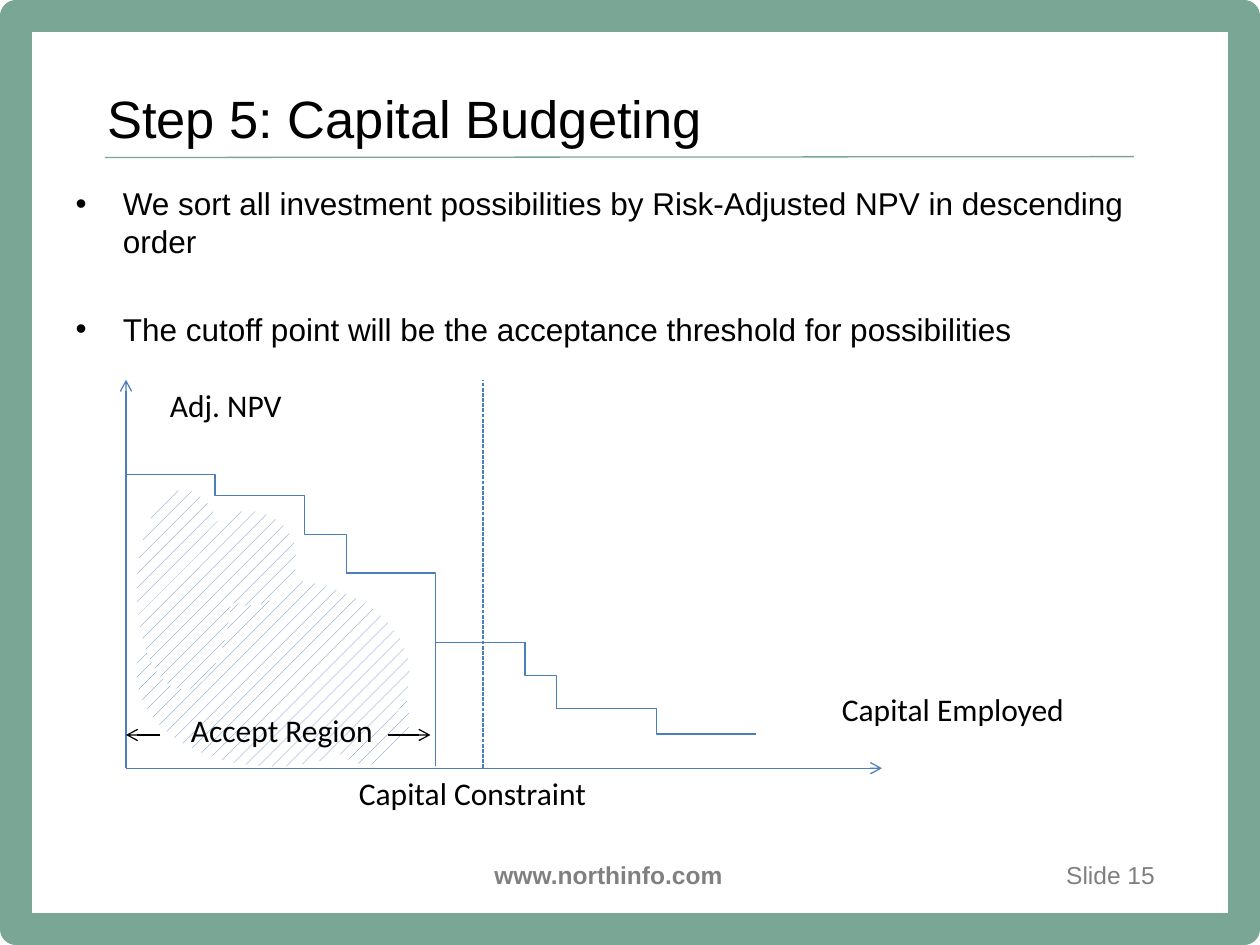
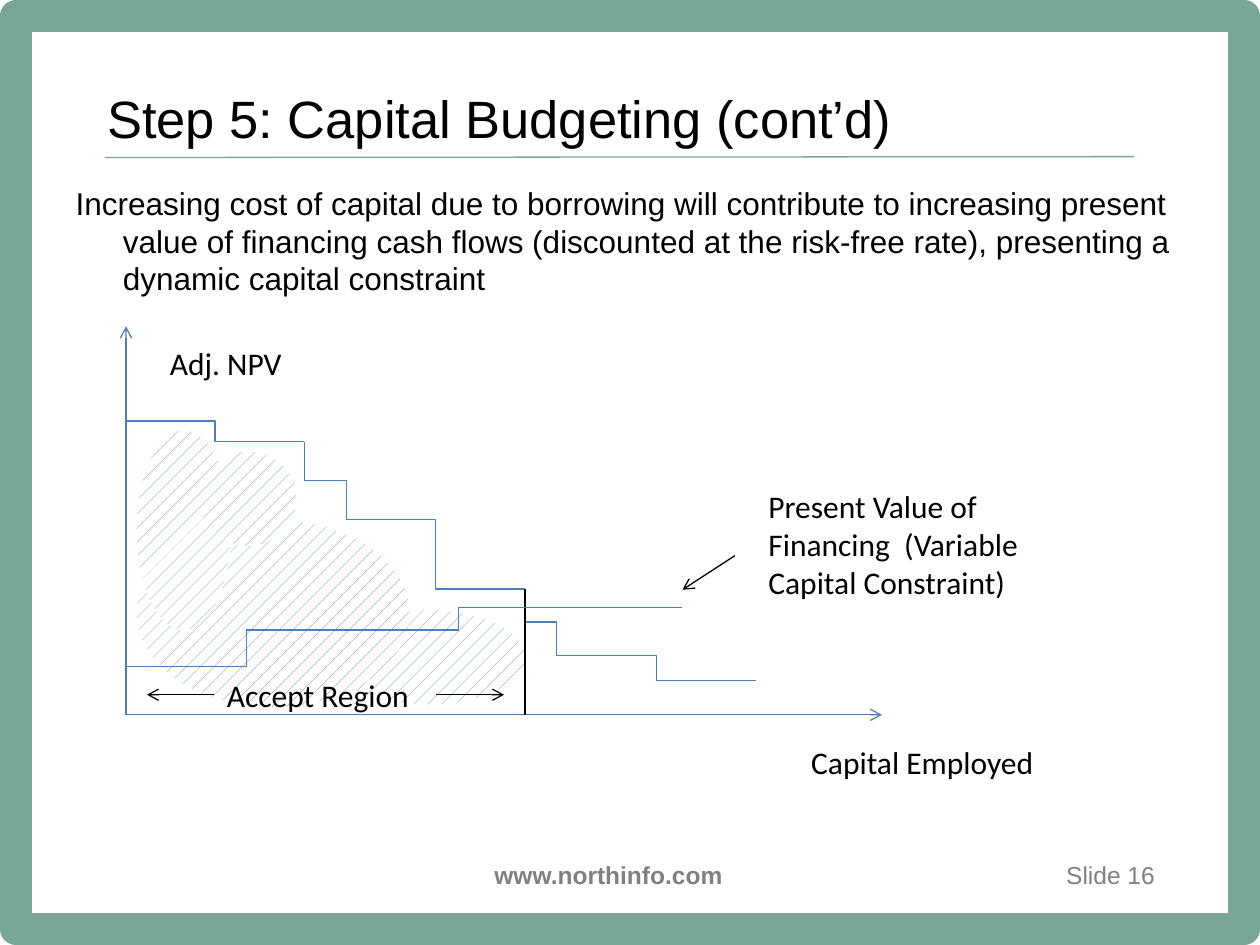
import pptx
import pptx.dml.color
import pptx.enum.dml
import pptx.enum.shapes
import pptx.enum.text
import pptx.oxml
import pptx.util

Pt = pptx.util.Pt
hex_color = pptx.dml.color.RGBColor.from_string
CONNECTOR = pptx.enum.shapes.MSO_CONNECTOR
SHAPE = pptx.enum.shapes.MSO_SHAPE
ALIGN = pptx.enum.text.PP_ALIGN
MIDDLE = pptx.enum.text.MSO_ANCHOR.MIDDLE
NAMESPACE = 'xmlns:a="http://schemas.openxmlformats.org/drawingml/2006/main"'

GREEN, BLUE, HATCH_BLUE = "7AA696", "4B7EBC", "4F81BD"
BLACK, GRAY, WHITE = "000000", "808080", "FFFFFF"
TITLE_FONT = {"name": "Arial", "size": Pt(30), "bold": False}
BODY_FONT = {"name": "Arial", "size": Pt(18)}
LABEL_FONT = {"name": "Calibri", "size": Pt(18)}
FOOTER_FONT = {"name": "Arial", "size": Pt(14)}

AXIS_LEFT, AXIS_RIGHT, AXIS_HEIGHT = 72, 504, 222
# Corner points of the NPV staircase: x, height above the capital axis
NPV_STEPS = [(72, 168), (174, 156), (198, 111.5), (300, 72), (318, 34), (432, 19.5)]
# Hatched ellipses: left, top, width, height, rotation
HATCHES = [(78, 331, 156, 107, 0), (48, 310, 114, 54, 90), (114, 292, 55.5, 54, 0)]

SLIDES = [
    {
        "title": "Step 5: Capital Budgeting",
        "bullets": True,
        "body": [
            "We sort all investment possibilities by Risk-Adjusted NPV in descending order",
            "The cutoff point will be the acceptance threshold for possibilities",
        ],
        "footer": "Slide 15",
        "axis_y": 439,
        "hatch_shift": 0,
        "extra_hatch": (186, 383, 48, 54, 0),
        "labels": [
            ("Adj. NPV", 90, 217, 84),
            ("Capital Employed", 474, 391, 144),
            ("Capital Constraint", 198, 439, 192),
            ("Accept Region", 102, 403, 120),
        ],
        "lines": [
            (249, 366, 249, 438, BLUE, {}),
            (276, 439, 276, 217, BLUE, {"dashed": True}),
            (91.5, 420, 72, 420, BLACK, {"arrow": True}),
            (222, 420, 246, 420, BLACK, {"arrow": True}),
        ],
    },
    {
        "title": "Step 5: Capital Budgeting (cont’d)",
        "bullets": False,
        "body": [
            "Increasing cost of capital due to borrowing will contribute to increasing "
            "present value of financing cash flows (discounted at the risk-free rate), "
            "presenting a dynamic capital constraint",
        ],
        "footer": "Slide 16",
        "axis_y": 408.5,
        "hatch_shift": -34,
        "extra_hatch": (186, 348.5, 114, 54, 0),
        "labels": [
            ("Adj. NPV", 90, 193, 84),
            ("Capital Employed", 456.5, 421, 144),
            ("Present Value of Financing  (Variable Capital Constraint)", 432, 275, 192),
            ("Accept Region", 122.5, 382.5, 120),
        ],
        "lines": [
            (300, 336.5, 300, 408.5, BLACK, {}),
            (72, 381, 210, 360, BLUE, {"bend": 0.5}),
            (210, 360, 390, 347, BLUE, {"bend": 0.29}),
            (420, 317.5, 390, 337, BLACK, {"arrow": True}),
            (122.5, 397, 84, 397, BLACK, {"arrow": True}),
            (249, 397, 288, 397, BLACK, {"arrow": True}),
        ],
    },
]


def add_line(slide, x1, y1, x2, y2, color, arrow=False, dashed=False, bend=None, upright=False):
    """Draw a line; bend makes it an elbow, upright makes the elbow start vertically."""
    if upright:
        center_x, center_y = (x1 + x2) / 2, (y1 + y2) / 2
        half_width, half_height = (y2 - y1) / 2, (x2 - x1) / 2
        x1, x2 = center_x - half_width, center_x + half_width
        y1, y2 = center_y - half_height, center_y + half_height
    kind = CONNECTOR.STRAIGHT if bend is None else CONNECTOR.ELBOW
    connector = slide.shapes.add_connector(kind, Pt(x1), Pt(y1), Pt(x2), Pt(y2))
    properties = connector._element.spPr
    if upright:
        properties.xfrm.set("rot", "16200000")
        properties.xfrm.set("flipH", "1")
    if bend is not None:
        guides = properties.xpath("a:prstGeom/a:avLst")[0]
        guides.append(pptx.oxml.parse_xml(
            f'<a:gd {NAMESPACE} name="adj1" fmla="val {round(bend * 100000)}"/>'))
    connector.line.color.rgb = hex_color(color)
    connector.line.width = Pt(0.75)
    if dashed:
        connector.line.dash_style = pptx.enum.dml.MSO_LINE.SQUARE_DOT
    if arrow:
        connector.line._get_or_add_ln().append(
            pptx.oxml.parse_xml(f'<a:tailEnd {NAMESPACE} type="arrow"/>'))
    properties.append(pptx.oxml.parse_xml(f"<a:effectLst {NAMESPACE}/>"))


def add_label(slide, text, left, top, width, height=29, font=LABEL_FONT, color=BLACK,
              align=ALIGN.LEFT):
    box = slide.shapes.add_textbox(Pt(left), Pt(top), Pt(width), Pt(height))
    box.text_frame.word_wrap = True
    paragraph = box.text_frame.paragraphs[0]
    paragraph.text = text
    paragraph.alignment = align
    for name, value in font.items():
        setattr(paragraph.font, name, value)
    paragraph.font.color.rgb = hex_color(color)
    return box


presentation = pptx.Presentation()
presentation.slide_width, presentation.slide_height = Pt(720), Pt(540)

for content in SLIDES:
    slide = presentation.slides.add_slide(presentation.slide_layouts[1])
    title, body = slide.placeholders

    # Frame, title rule and footer
    frame = slide.shapes.add_shape(SHAPE.RECTANGLE, Pt(9), Pt(9), Pt(702), Pt(522))
    frame.shadow.inherit = False
    frame.fill.background()
    frame.line.color.rgb = hex_color(GREEN)
    frame.line.width = Pt(18)
    add_line(slide, 60, 90, 648, 89.5, GREEN)
    add_label(slide, "www.northinfo.com", 255.5, 488, 184.5, 24,
              FOOTER_FONT | {"bold": True}, GRAY, ALIGN.CENTER)
    number = add_label(slide, content["footer"], 588, 488, 72, 24,
                       FOOTER_FONT, GRAY, ALIGN.RIGHT)
    number.text_frame.vertical_anchor = MIDDLE
    for side in ("left", "top", "right", "bottom"):
        setattr(number.text_frame, f"margin_{side}", 0)

    # Title and body text
    for placeholder, lines, top, height, font in (
        (title, [content["title"]], 42, 50, TITLE_FONT),
        (body, content["body"], 102, 356.5, BODY_FONT),
    ):
        placeholder.left, placeholder.top = Pt(54 if placeholder is title else 36), Pt(top)
        placeholder.width, placeholder.height = Pt(648), Pt(height)
        frame_text = placeholder.text_frame
        frame_text.auto_size = pptx.enum.text.MSO_AUTO_SIZE.NONE
        frame_text.text = "\n".join(lines)
        for index, paragraph in enumerate(frame_text.paragraphs):
            if placeholder is body:
                if not content["bullets"]:
                    paragraph._p.get_or_add_pPr().append(
                        pptx.oxml.parse_xml(f"<a:buNone {NAMESPACE}/>"))
                paragraph.line_spacing = Pt(21.4)
            paragraph.space_before = Pt(29 if index else 0)
            paragraph.alignment = ALIGN.LEFT
            for name, value in font.items():
                setattr(paragraph.font, name, value)
            paragraph.font.color.rgb = hex_color(BLACK)
    title.text_frame.vertical_anchor = MIDDLE

    # Hatched accept region
    shift = content["hatch_shift"]
    shifted = [(left, top + shift, *rest) for left, top, *rest in HATCHES]
    for left, top, width, height, rotation in [content["extra_hatch"], *shifted]:
        ellipse = slide.shapes.add_shape(SHAPE.OVAL, Pt(left), Pt(top), Pt(width), Pt(height))
        ellipse.rotation = rotation
        ellipse.shadow.inherit = False
        ellipse.line.fill.background()
        ellipse.fill.patterned()
        ellipse.fill.pattern = pptx.enum.dml.MSO_PATTERN.PERCENT_10
        ellipse.fill.fore_color.rgb = hex_color(HATCH_BLUE)
        ellipse.fill.back_color.rgb = hex_color(WHITE)

    # Axes and NPV staircase
    axis_y = content["axis_y"]
    add_line(slide, AXIS_LEFT, axis_y, AXIS_RIGHT, axis_y, BLUE, arrow=True)
    add_line(slide, AXIS_LEFT, axis_y, AXIS_LEFT, axis_y - AXIS_HEIGHT, BLUE, arrow=True)
    for index, ((x1, height1), (x2, height2)) in enumerate(zip(NPV_STEPS, NPV_STEPS[1:])):
        add_line(slide, x1, axis_y - height1, x2, axis_y - height2, BLUE,
                 bend=0.5, upright=index % 2 == 1)

    for label in content["labels"]:
        add_label(slide, *label)
    for *ends, color, options in content["lines"]:
        add_line(slide, *ends, color, **options)

presentation.save("out.pptx")
